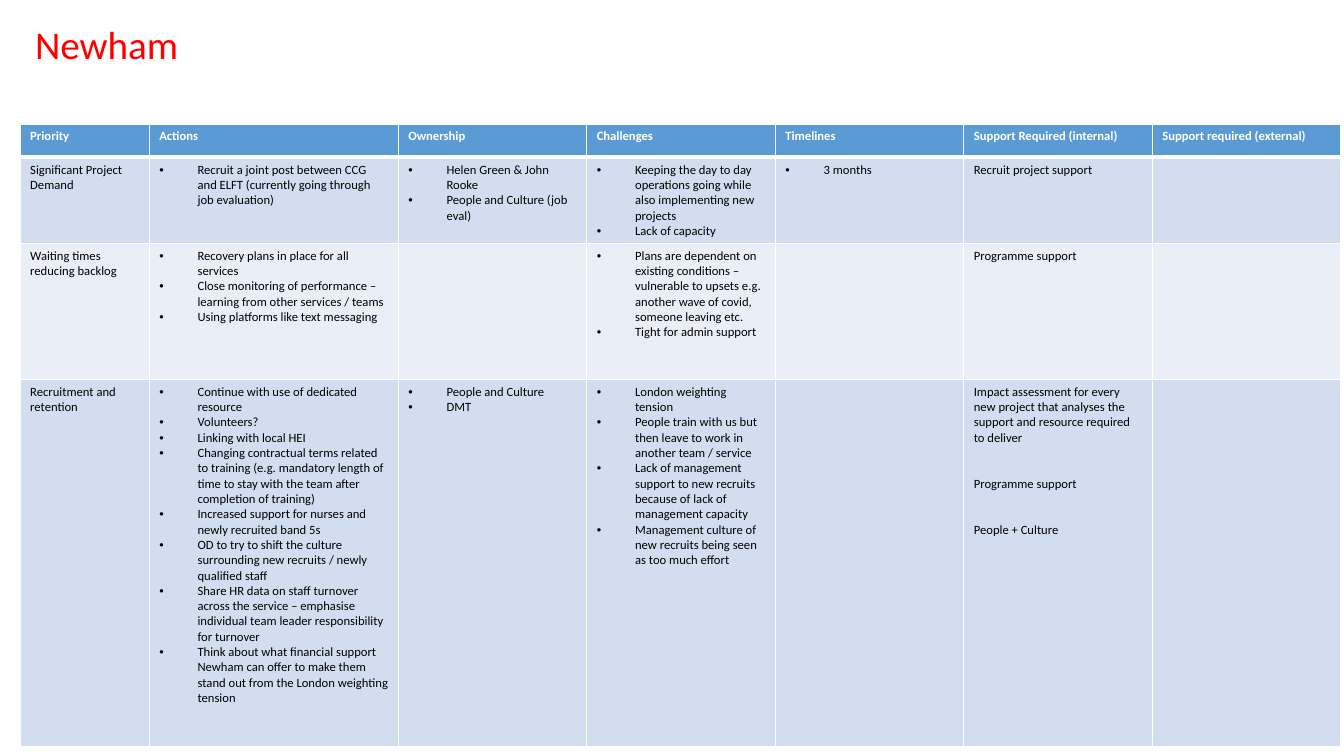
from lxml import etree
from pptx import Presentation
from pptx.dml.color import RGBColor
from pptx.enum import text
from pptx.oxml.ns import qn
from pptx.util import Inches, Pt

FONT = "Calibri"
RED = RGBColor(0xFF, 0x00, 0x00)
WHITE = RGBColor(0xFF, 0xFF, 0xFF)
BLACK = RGBColor(0x00, 0x00, 0x00)
HEADER_BLUE = RGBColor(0x5B, 0x9B, 0xD5)
BANDS = [RGBColor(0xD2, 0xDE, 0xEF), RGBColor(0xEA, 0xEF, 0xF7)]

TITLE = "Newham"
HEADERS = ["Priority", "Actions", "Ownership", "Challenges", "Timelines",
           "Support Required (internal)", "Support required (external)"]
COLUMN_WIDTHS = [1.28, 2.47] + [1.87] * 5
ROW_HEIGHTS = [0.33, 0.85, 1.35, 3.64]
BULLETED_COLUMNS = range(1, 5)

# One list of paragraphs for each cell
PRIORITIES = [
    [
        ["Significant Project Demand"],
        ["Recruit a joint post between CCG and ELFT (currently going through job evaluation)"],
        ["Helen Green & John Rooke", "People and Culture (job eval)"],
        ["Keeping the day to day operations going while also implementing new projects",
         "Lack of capacity"],
        ["3 months"],
        ["Recruit project support"],
        [],
    ],
    [
        ["Waiting times reducing backlog"],
        ["Recovery plans in place for all services",
         "Close monitoring of performance – learning from other services / teams",
         "Using platforms like text messaging"],
        [],
        ["Plans are dependent on existing conditions – vulnerable to upsets e.g. another wave "
         "of covid, someone leaving etc.",
         "Tight for admin support"],
        [],
        ["Programme support"],
        [],
    ],
    [
        ["Recruitment and retention"],
        ["Continue with use of dedicated resource",
         "Volunteers?",
         "Linking with local HEI",
         "Changing contractual terms related to training (e.g. mandatory length of time "
         "to stay with the team after completion of training)",
         "Increased support for nurses and newly recruited band 5s",
         "OD to try to shift the culture surrounding new recruits / newly qualified staff",
         "Share HR data on staff turnover across the service – emphasise individual "
         "team leader responsibility for turnover",
         "Think about what financial support Newham can offer to make them stand out "
         "from the London weighting tension"],
        ["People and Culture", "DMT"],
        ["London weighting tension",
         "People train with us but then leave to work in another team / service",
         "Lack of management support to new recruits because of lack of management capacity",
         "Management culture of new recruits being seen as too much effort"],
        [],
        ["Impact assessment for every new project that analyses the support and resource "
         "required to deliver",
         "Programme support",
         "People + Culture"],
        [],
    ],
]


def set_font(paragraph, size, color, bold=False):
    font = paragraph.font
    font.name, font.size, font.bold = FONT, Pt(size), bold
    font.color.rgb = color


def add_bullet(paragraph):
    properties = paragraph._p.get_or_add_pPr()
    properties.set("marL", str(Inches(0.38)))
    properties.set("indent", str(-Inches(0.38)))
    etree.SubElement(properties, qn("a:buFont")).set("typeface", "Arial")
    etree.SubElement(properties, qn("a:buChar")).set("char", "•")


def set_borders(cell, top, bottom):
    """Draw white borders; top and bottom are widths in points."""
    properties = cell._tc.get_or_add_tcPr()
    for side, width in (("L", 1), ("R", 1), ("T", top), ("B", bottom)):
        line = etree.SubElement(properties, qn(f"a:ln{side}"), w=str(Pt(width)))
        fill = etree.SubElement(line, qn("a:solidFill"))
        etree.SubElement(fill, qn("a:srgbClr")).set("val", str(WHITE))


def fill_cell(cell, lines, row, column):
    is_header = row == 0
    set_borders(cell, top=3 if row == 1 else 1, bottom=3 if is_header else 1)
    cell.fill.solid()
    cell.fill.fore_color.rgb = HEADER_BLUE if is_header else BANDS[(row - 1) % 2]
    frame = cell.text_frame
    bulleted = not is_header and column in BULLETED_COLUMNS
    for index, line in enumerate(lines):
        paragraph = frame.add_paragraph() if index else frame.paragraphs[0]
        paragraph.text = line
        if index and not bulleted:
            paragraph.space_before = Pt(22)
        if bulleted:
            add_bullet(paragraph)
        set_font(paragraph, 9, WHITE if is_header else BLACK, bold=is_header)


def add_title(slide):
    box = slide.shapes.add_textbox(Inches(0.25), Inches(0.33), Inches(3.53), Inches(0.26))
    frame = box.text_frame
    frame.word_wrap = True
    frame.vertical_anchor = text.MSO_ANCHOR.MIDDLE
    paragraph = frame.paragraphs[0]
    paragraph.text = TITLE
    paragraph.line_spacing = 0.9
    set_font(paragraph, 28, RED)


def add_priorities_table(slide):
    rows = [[[header] for header in HEADERS]] + PRIORITIES
    table = slide.shapes.add_table(
        len(rows), len(HEADERS), Inches(0.2), Inches(1.23),
        Inches(sum(COLUMN_WIDTHS)), Inches(sum(ROW_HEIGHTS))).table
    for column, width in zip(table.columns, COLUMN_WIDTHS):
        column.width = Inches(width)
    for row, height in zip(table.rows, ROW_HEIGHTS):
        row.height = Inches(height)
    for row, cells in enumerate(rows):
        for column, lines in enumerate(cells):
            fill_cell(table.cell(row, column), lines, row, column)


def main():
    presentation = Presentation()
    presentation.slide_width, presentation.slide_height = Inches(13.33), Inches(7.5)
    slide = presentation.slides.add_slide(presentation.slide_layouts[6])
    add_title(slide)
    add_priorities_table(slide)
    presentation.save("out.pptx")


if __name__ == "__main__":
    main()
